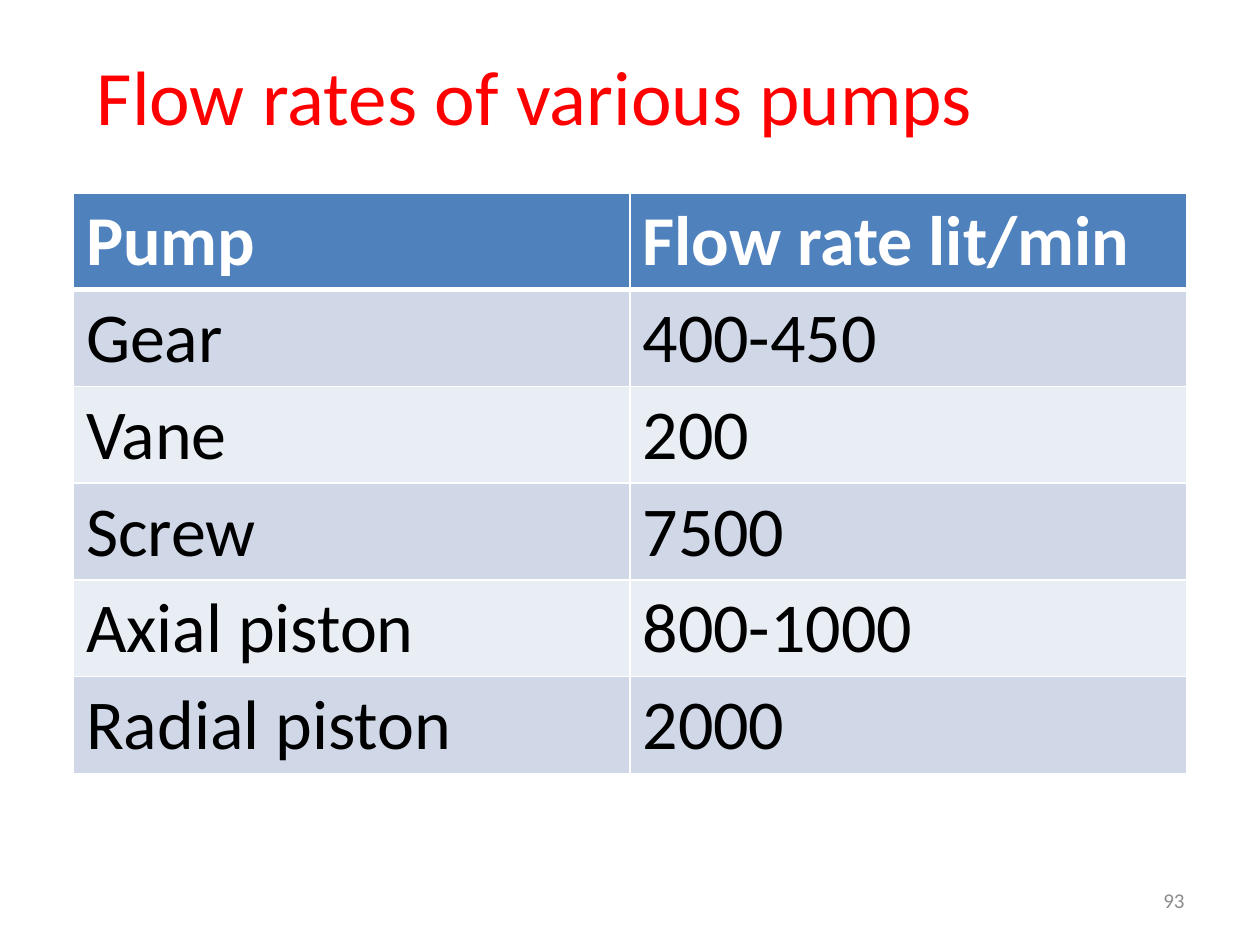
from dataclasses import dataclass

from lxml.etree import SubElement
from pptx import Presentation
from pptx.dml.color import RGBColor as Color
from pptx.enum.text import MSO_ANCHOR as Anchor, PP_ALIGN as Align
from pptx.oxml.ns import qn
from pptx.util import Cm, Pt


@dataclass(frozen=True)
class Theme:
    font: str = "Calibri"
    title: str = "FF0000"
    text: str = "000000"
    number: str = "8C8C8C"
    white: str = "FFFFFF"
    header: str = "4F81BD"
    bands: tuple = ("D0D8E8", "E9EDF4")
    title_size: int = 44
    table_size: int = 40
    number_size: int = 12
    thin: int = 1
    thick: int = 3


class SlideBuilder:
    def __init__(self, slide, theme):
        self.slide = slide
        self.theme = theme

    def style(self, paragraph, size, color, bold=False):
        font = paragraph.font
        font.name, font.size, font.bold = self.theme.font, Pt(size), bold
        font.color.rgb = Color.from_string(color)

    def text(self, text, box, size, color, align=Align.LEFT, anchor=Anchor.TOP):
        shape = self.slide.shapes.add_textbox(*(Cm(length) for length in box))
        frame = shape.text_frame
        frame.word_wrap = True
        frame.vertical_anchor = anchor
        frame.text = text
        paragraph = frame.paragraphs[0]
        paragraph.alignment = align
        self.style(paragraph, size, color)

    def borders(self, cell, widths):
        properties = cell._tc.get_or_add_tcPr()
        for side, width in widths.items():
            line = SubElement(properties, qn(f"a:ln{side}"), w=str(Pt(width)))
            fill = SubElement(line, qn("a:solidFill"))
            SubElement(fill, qn("a:srgbClr"), val=self.theme.white)

    def table(self, rows, left, top, column_width, row_height):
        theme = self.theme
        columns = len(rows[0])
        table = self.slide.shapes.add_table(
            len(rows), columns, Cm(left), Cm(top),
            Cm(column_width * columns), Cm(row_height * len(rows))).table
        for row_index, row in enumerate(rows):
            header = row_index == 0
            fill = theme.header if header else theme.bands[(row_index - 1) % 2]
            for column_index, text in enumerate(row):
                cell = table.cell(row_index, column_index)
                cell.text = text
                self.style(cell.text_frame.paragraphs[0], theme.table_size,
                           theme.white if header else theme.text, header)
                # Borders come before the fill in the cell properties
                self.borders(cell, {
                    "L": theme.thin, "R": theme.thin,
                    "T": theme.thick if row_index == 1 else theme.thin,
                    "B": theme.thick if header else theme.thin})
                cell.fill.solid()
                cell.fill.fore_color.rgb = Color.from_string(fill)


def main():
    presentation = Presentation()
    presentation.slide_width, presentation.slide_height = Cm(25.4), Cm(19.05)
    theme = Theme()
    slide = presentation.slides.add_slide(presentation.slide_layouts[6])
    builder = SlideBuilder(slide, theme)

    # Slide number
    builder.text("93", (18.2, 17.65, 5.93, 1.01), theme.number_size,
                 theme.number, Align.RIGHT, Anchor.MIDDLE)

    # Title
    builder.text("Flow rates of various pumps", (1.7, 0.85, 21.38, 2.14),
                 theme.title_size, theme.title)

    # Flow rate table
    pumps = [
        ("Pump", "Flow rate lit/min"),
        ("Gear", "400-450"),
        ("Vane", "200"),
        ("Screw", "7500"),
        ("Axial piston", "800-1000"),
        ("Radial piston", "2000"),
    ]
    builder.table(pumps, left=1.48, top=3.89, column_width=11.22, row_height=1.95)

    presentation.save("out.pptx")


if __name__ == "__main__":
    main()
